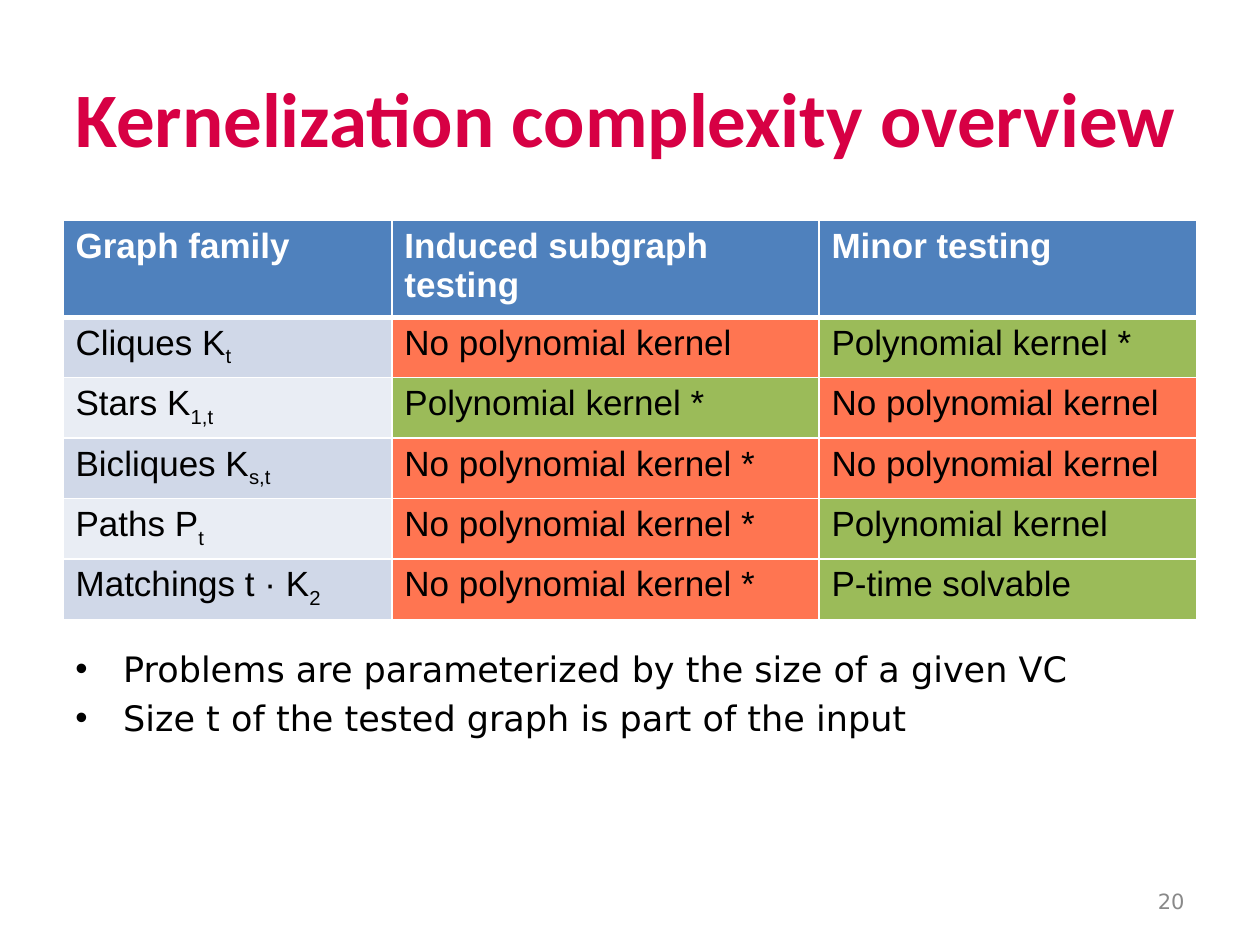
from lxml import etree
from pptx import Presentation
from pptx.dml.color import RGBColor
from pptx.enum.text import MSO_ANCHOR, PP_ALIGN
from pptx.oxml.ns import qn
from pptx.util import Inches, Pt

CRIMSON = RGBColor(0xD7, 0x00, 0x44)
BLUE = RGBColor(0x4F, 0x81, 0xBD)
BAND_DARK = RGBColor(0xD0, 0xD8, 0xE8)
BAND_LIGHT = RGBColor(0xE9, 0xED, 0xF4)
RED = RGBColor(0xFF, 0x75, 0x51)
GREEN = RGBColor(0x9B, 0xBB, 0x59)
GRAY = RGBColor(0x89, 0x89, 0x89)
BLACK = RGBColor(0, 0, 0)
WHITE = RGBColor(255, 255, 255)


def write(p, text, font="DejaVu Sans", size=20, color=BLACK, bold=False,
          align=PP_ALIGN.LEFT):
    """Fill a paragraph; what follows an underscore becomes a subscript."""
    p.alignment = align
    for i, part in enumerate(text.split("_")):
        r = p.add_run()
        r.text = part
        r.font.name, r.font.size, r.font.bold = font, Pt(size), bold
        r.font.color.rgb = color
        if i:
            r._r.get_or_add_rPr().set("baseline", "-25000")


def set_borders(cell, **widths):
    """Draw white cell borders, with widths in points for L, R, T and B."""
    tcPr = cell._tc.get_or_add_tcPr()
    for i, (side, width) in enumerate(widths.items()):
        ln = etree.Element(qn(f"a:ln{side}"), w=str(Pt(width)))
        fill = etree.SubElement(ln, qn("a:solidFill"))
        etree.SubElement(fill, qn("a:srgbClr"), val=str(WHITE))
        tcPr.insert(i, ln)


prs = Presentation()
prs.slide_width, prs.slide_height = Inches(10), Inches(7.5)
slide = prs.slides.add_slide(prs.slide_layouts[6])

# Title
tf = slide.shapes.add_textbox(Inches(0.5), Inches(0.3), Inches(9), Inches(1.25)).text_frame
tf.word_wrap = True
tf.vertical_anchor = MSO_ANCHOR.MIDDLE
write(tf.paragraphs[0], "Kernelization complexity overview",
      font="Calibri", size=44, color=CRIMSON, bold=True)

# Results table
ROWS = [
    ("Graph family", "Induced subgraph testing", "Minor testing"),
    ("Cliques K_t", "No polynomial kernel", "Polynomial kernel *"),
    ("Stars K_1,t", "Polynomial kernel *", "No polynomial kernel"),
    ("Bicliques K_s,t", "No polynomial kernel *", "No polynomial kernel"),
    ("Paths P_t", "No polynomial kernel *", "Polynomial kernel"),
    ("Matchings t · K_2", "No polynomial kernel *", "P-time solvable"),
]
table = slide.shapes.add_table(len(ROWS), 3, Inches(0.5), Inches(1.75),
                               Inches(9), Inches(0.41 * len(ROWS))).table
for column, width in zip(table.columns, (2.61, 3.39, 3)):
    column.width = Inches(width)

for i, row in enumerate(ROWS):
    for j, text in enumerate(row):
        cell = table.cell(i, j)
        header = i == 0
        if header:
            fill = BLUE
        elif j == 0:
            fill = BAND_DARK if i % 2 else BAND_LIGHT
        else:
            fill = RED if text.startswith("No") else GREEN
        cell.fill.solid()
        cell.fill.fore_color.rgb = fill
        set_borders(cell, L=1, R=1, T=3 if i == 1 else 1, B=3 if header else 1)
        write(cell.text_frame.paragraphs[0], text, font="Arial",
              color=WHITE if header else BLACK, bold=header)

# Slide number
tf = slide.shapes.add_textbox(Inches(7.17), Inches(6.95), Inches(2.33), Inches(0.4)).text_frame
tf.word_wrap = True
tf.vertical_anchor = MSO_ANCHOR.MIDDLE
write(tf.paragraphs[0], "20", size=12, color=GRAY, align=PP_ALIGN.RIGHT)

# Remarks
REMARKS = [
    "Problems are parameterized by the size of a given VC",
    "Size t of the tested graph is part of the input",
]
tf = slide.shapes.add_textbox(Inches(0.5), Inches(5.09), Inches(9), Inches(1.1)).text_frame
tf.word_wrap = True
for i, remark in enumerate(REMARKS):
    p = tf.add_paragraph() if i else tf.paragraphs[0]
    if i:
        p.space_before = Pt(4)
    pPr = p._p.get_or_add_pPr()
    pPr.set("marL", str(Inches(0.38)))
    pPr.set("indent", str(-Inches(0.38)))
    etree.SubElement(pPr, qn("a:buFont"), typeface="Arial")
    etree.SubElement(pPr, qn("a:buChar"), char="•")
    write(p, remark)

prs.save("out.pptx")
